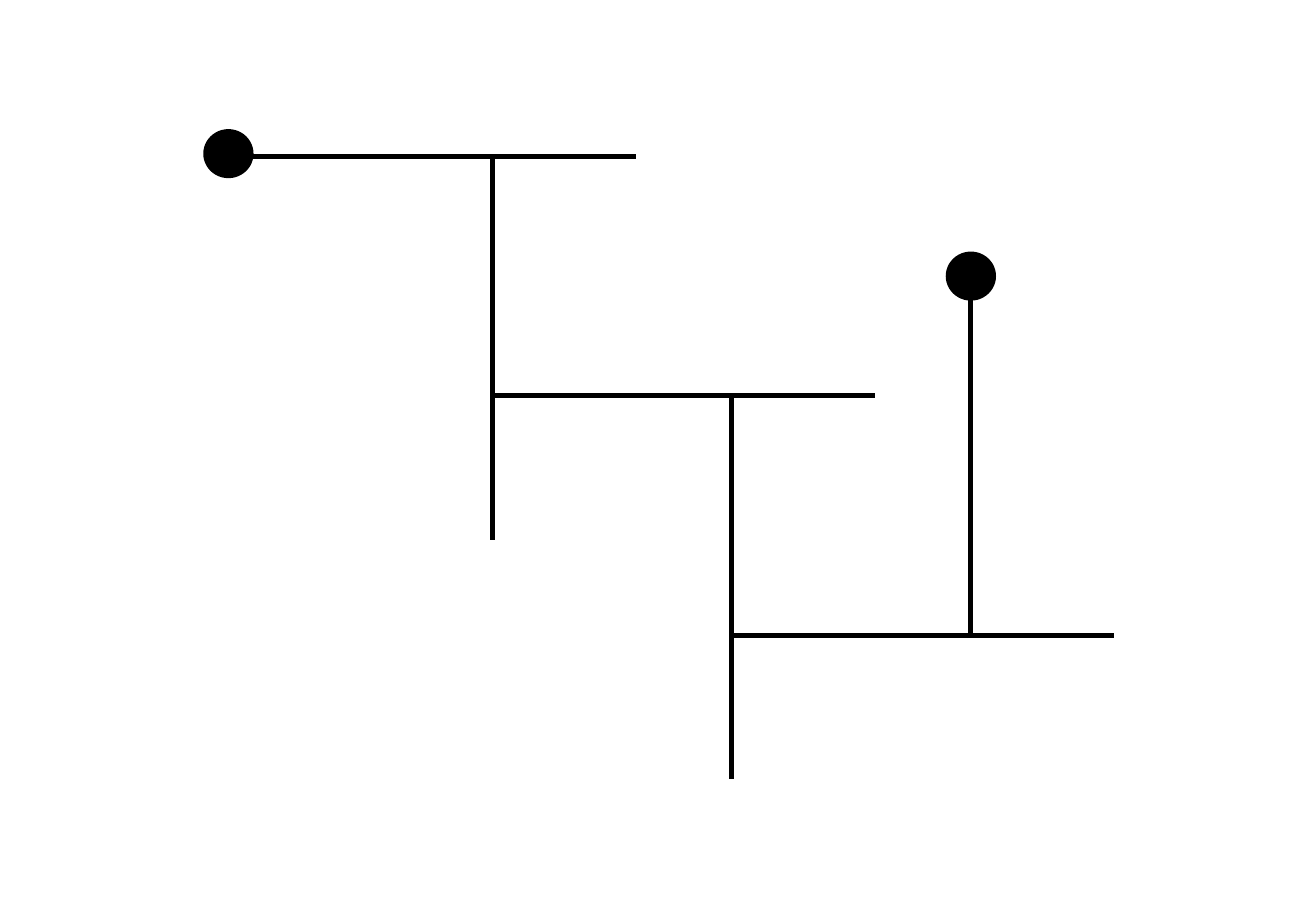
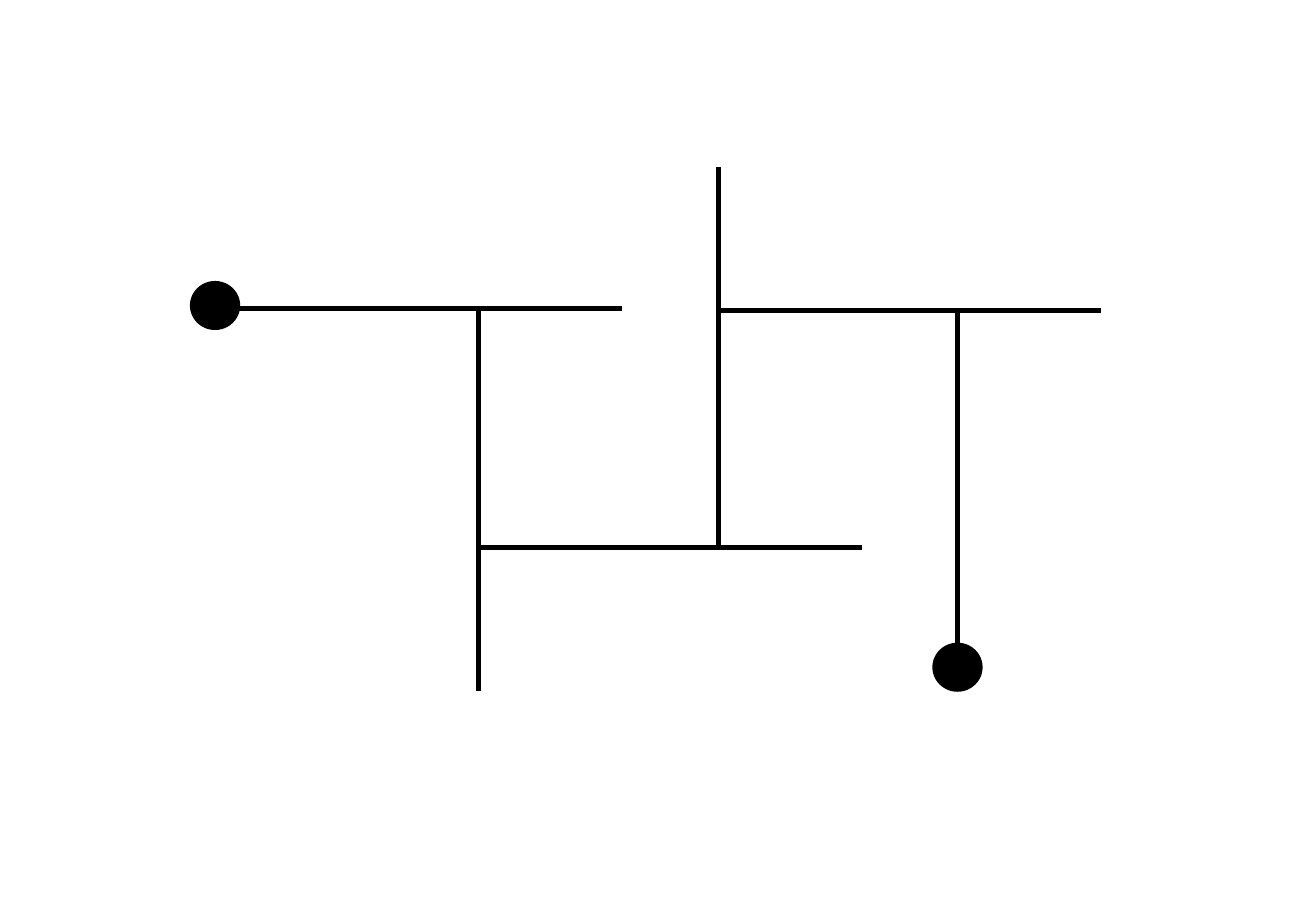
from lxml import etree
from pptx import Presentation
from pptx.dml.color import RGBColor
from pptx.enum.shapes import MSO_CONNECTOR, MSO_SHAPE
from pptx.oxml.ns import qn
from pptx.util import Inches, Pt

STRAIGHT = MSO_CONNECTOR.STRAIGHT
NODE = MSO_SHAPE.FLOWCHART_CONNECTOR

COLORS = {"ink": "000000"}
BRANCH_FORMAT = {"width": Pt(3)}
NODE_FORMAT = {"width": Pt(1)}

SLIDE_WIDTH, SLIDE_HEIGHT = 10.83, 7.5
STEP = 1.97
STUB = 0.6
NODE_WIDTH, NODE_HEIGHT = 0.4, 0.39
START_NODE_RISE = 0.22

COMMON_BRANCHES = [
    (0, 0, 1, 0),
    (1, 0, 1 + STUB, 0),
    (1, 0, 1, 1),
    (1, 1, 1, 1 + STUB),
    (1, 1, 2, 1),
    (2, 1, 2 + STUB, 1),
]

TREES = [
    {"origin": (2.08, 1.29), "last_row": 2, "turn": 1,
     "end_row": STUB, "end_node_top": 0.4},
    {"origin": (1.97, 2.54), "last_row": 0.01, "turn": -1,
     "end_row": 1.4, "end_node_top": 1.4},
]


def style_line(line, line_format):
    line.color.rgb = RGBColor.from_string(COLORS["ink"])
    for name, value in line_format.items():
        setattr(line, name, value)


def grid_point(origin, column, row):
    return origin[0] + column * STEP, origin[1] + row * STEP


def add_branch(tree, origin, branch):
    start = grid_point(origin, *branch[:2])
    end = grid_point(origin, *branch[2:])
    segment = tree.shapes.add_connector(
        STRAIGHT, *(Inches(length) for length in start + end))
    style_line(segment.line, BRANCH_FORMAT)
    etree.SubElement(segment.line._get_or_add_ln().getparent(), qn("a:effectLst"))


def add_node(tree, left, top):
    node = tree.shapes.add_shape(
        NODE, Inches(left), Inches(top), Inches(NODE_WIDTH), Inches(NODE_HEIGHT))
    node.shadow.inherit = False
    node.fill.solid()
    node.fill.fore_color.rgb = RGBColor.from_string(COLORS["ink"])
    style_line(node.line, NODE_FORMAT)


def last_branches(last_row, turn, end_row):
    return [
        (2, 1, 2, last_row),
        (2, last_row, 2, last_row + turn * STUB),
        (2, last_row, 3, last_row),
        (3, last_row, 3 + STUB, last_row),
        (3, last_row, 3, end_row),
    ]


def add_tree(slide, origin, last_row, turn, end_row, end_node_top):
    tree = slide.shapes.add_group_shape()
    add_node(tree, origin[0] - NODE_WIDTH, origin[1] - START_NODE_RISE)
    end_x, end_top = grid_point(origin, 3, end_node_top)
    add_node(tree, end_x - NODE_WIDTH / 2, end_top)
    for branch in COMMON_BRANCHES + last_branches(last_row, turn, end_row):
        add_branch(tree, origin, branch)


def main():
    deck = Presentation()
    deck.slide_width = Inches(SLIDE_WIDTH)
    deck.slide_height = Inches(SLIDE_HEIGHT)
    blank = deck.slide_layouts[6]
    for tree in TREES:
        add_tree(deck.slides.add_slide(blank), **tree)
    deck.save("out.pptx")


if __name__ == "__main__":
    main()
